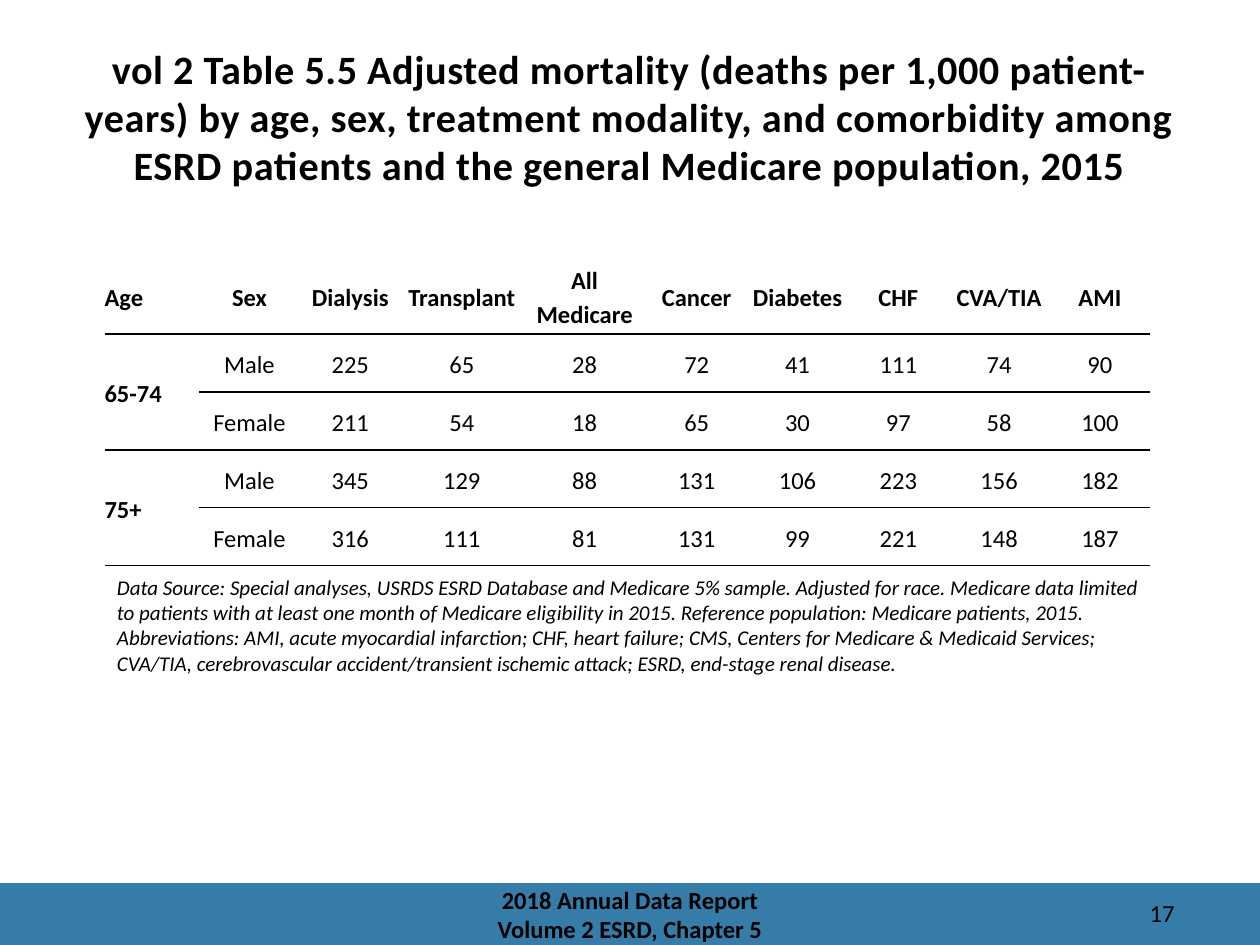
from lxml import etree
from pptx import Presentation
from pptx.dml.color import RGBColor
from pptx.enum import shapes, text
from pptx.oxml import ns
from pptx.util import Inches, Pt

BLACK = RGBColor(0x00, 0x00, 0x00)
WHITE = RGBColor(0xFF, 0xFF, 0xFF)
BLUE = RGBColor(0x36, 0x7C, 0xA8)
FONT = "Calibri"
NO_STYLE_NO_GRID = "{2D5ABB26-0587-4C30-8999-92F81FD0307C}"

TITLE = ("vol 2 Table 5.5 Adjusted mortality (deaths per 1,000 patient-years) by age, sex, "
         "treatment modality, and comorbidity among ESRD patients and the general Medicare "
         "population, 2015")
NOTE = ("Data Source: Special analyses, USRDS ESRD Database and Medicare 5% sample. Adjusted for "
        "race. Medicare data limited to patients with at least one month of Medicare eligibility "
        "in 2015. Reference population: Medicare patients, 2015. Abbreviations: AMI, acute "
        "myocardial infarction; CHF, heart failure; CMS, Centers for Medicare & Medicaid "
        "Services; CVA/TIA, cerebrovascular accident/transient ischemic attack; ESRD, end-stage "
        "renal disease.")
ROWS = [
    ["Age", "Sex", "Dialysis", "Transplant", "All Medicare", "Cancer", "Diabetes", "CHF",
     "CVA/TIA", "AMI"],
    ["65-74", "Male", 225, 65, 28, 72, 41, 111, 74, 90],
    ["", "Female", 211, 54, 18, 65, 30, 97, 58, 100],
    ["75+", "Male", 345, 129, 88, 131, 106, 223, 156, 182],
    ["", "Female", 316, 111, 81, 131, 99, 221, 148, 187],
]
COLUMN_WIDTHS = [0.75, 0.8, 0.8, 0.97, 0.98] + [0.8] * 5
ROW_HEIGHTS = [0.61] + [0.46] * 4


def add_span(para, words, size, bold=False, italic=False):
    span = para.add_run()
    span.text = words
    font = span.font
    font.name, font.size, font.bold, font.italic = FONT, Pt(size), bold, italic
    font.color.rgb = BLACK
    return span


def add_text_box(page, box, align, anchor=text.MSO_ANCHOR.TOP):
    """Add an empty wrapping text box and return its first paragraph."""
    frame = page.shapes.add_textbox(*map(Inches, box)).text_frame
    frame.word_wrap = True
    frame.vertical_anchor = anchor
    para = frame.paragraphs[0]
    para.alignment = align
    return para


def add_title(page, box):
    para = add_text_box(page, box, text.PP_ALIGN.CENTER)
    span = add_span(para, TITLE, 23, bold=True)
    span.font._element.set("spc", "30")


def add_rule(cell, tag):
    """Draw a thin black border on one side of a cell."""
    line = etree.Element(ns.qn(tag), w=str(Pt(1)))
    fill = etree.SubElement(line, ns.qn("a:solidFill"))
    etree.SubElement(fill, ns.qn("a:srgbClr"), val=str(BLACK))
    cell._tc.get_or_add_tcPr().insert(0, line)


def fill_cell(cell, words, bold, align):
    cell.fill.background()
    cell.vertical_anchor = text.MSO_ANCHOR.MIDDLE
    cell.margin_left = cell.margin_right = 0
    cell.margin_top = cell.margin_bottom = Inches(0.01)
    para = cell.text_frame.paragraphs[0]
    para.alignment = align
    para.line_spacing = 1.15
    if words:
        add_span(para, words, 14, bold)


def add_mortality_table(page, box):
    frame = page.shapes.add_table(len(ROWS), len(COLUMN_WIDTHS), *map(Inches, box))
    table = frame.table
    table.first_row = table.horz_banding = False
    table._tbl.tblPr.find(ns.qn("a:tableStyleId")).text = NO_STYLE_NO_GRID
    for column, width in zip(table.columns, COLUMN_WIDTHS):
        column.width = Inches(width)
    for row, height in zip(table.rows, ROW_HEIGHTS):
        row.height = Inches(height)

    # Each age group spans a male and a female row
    for first in (1, 3):
        table.cell(first, 0).merge(table.cell(first + 1, 0))

    for r, values in enumerate(ROWS):
        for c, value in enumerate(values):
            cell = table.cell(r, c)
            align = text.PP_ALIGN.CENTER if c else text.PP_ALIGN.LEFT
            fill_cell(cell, str(value), r == 0 or c == 0, align)
            # Rules close the header and each age group
            if r % 2 == 0 or c == 0:
                add_rule(cell, "a:lnB")
            if r % 2 == 1:
                add_rule(cell, "a:lnT")


def add_note(page, box):
    para = add_text_box(page, box, text.PP_ALIGN.LEFT)
    add_span(para, NOTE, 12, italic=True)


def add_footer(page, box):
    left, top, width, height = box
    band = page.shapes.add_shape(shapes.MSO_SHAPE.RECTANGLE, *map(Inches, box))
    band.shadow.inherit = False
    band.fill.solid()
    band.fill.fore_color.rgb = BLUE
    band.line.fill.background()

    # Report name, centred in the band
    name_width = 3.38
    name_box = (left + (width - name_width) / 2, top, name_width, height)
    para = add_text_box(page, name_box, text.PP_ALIGN.CENTER, text.MSO_ANCHOR.MIDDLE)
    add_span(para, "2018 Annual Data Report", 14, bold=True)
    para.add_line_break()
    add_span(para, "Volume 2 ESRD, Chapter 5", 14, bold=True)

    # Page number
    number_box = (left + width - 1.58, top + 0.07, 1, 0.3)
    add_span(add_text_box(page, number_box, text.PP_ALIGN.RIGHT), "17", 14)


def main():
    deck = Presentation()
    deck.slide_width, deck.slide_height = Inches(10), Inches(7.5)
    page = deck.slides.add_slide(deck.slide_layouts[6])
    page.background.fill.solid()
    page.background.fill.fore_color.rgb = WHITE

    add_footer(page, (0, 7.01, 10, 0.49))
    add_title(page, (0.5, 0.3, 9, 1.25))
    add_mortality_table(page, (0.83, 2.04, 8.34, 2.46))
    add_note(page, (0.83, 4.51, 8.34, 0.91))
    deck.save("out.pptx")


if __name__ == "__main__":
    main()
